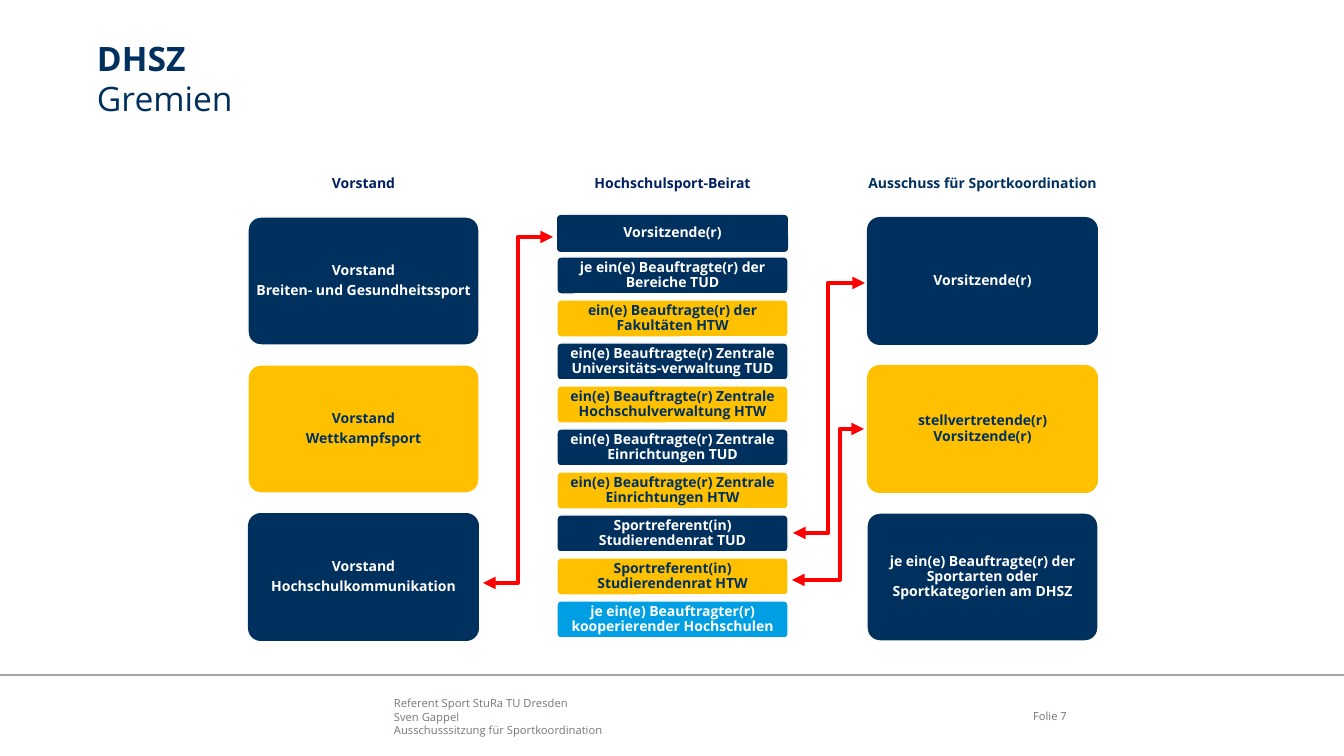
from lxml import etree
from pptx import Presentation
from pptx.dml.color import RGBColor
from pptx.enum.shapes import MSO_CONNECTOR, MSO_SHAPE
from pptx.enum.text import MSO_ANCHOR, PP_ALIGN
from pptx.oxml.ns import qn
from pptx.util import Pt

SLIDE_WIDTH, SLIDE_HEIGHT = 1344, 756
EMU_PER_PX = 12192000 / SLIDE_WIDTH
FONT = "Open Sans"
COLORS = {
    "title": "00305E", "navy": "00305D", "heading": "002060", "yellow": "FFC000",
    "cyan": "009FE3", "white": "FFFFFF", "red": "FF0000",
    "gray": "727879", "rule": "A6A6A6",
}
TEXT_ON = {"navy": "white", "yellow": "navy", "cyan": "white"}
LEFT, CENTER, RIGHT = PP_ALIGN.LEFT, PP_ALIGN.CENTER, PP_ALIGN.RIGHT
TOP, MIDDLE, BOTTOM = MSO_ANCHOR.TOP, MSO_ANCHOR.MIDDLE, MSO_ANCHOR.BOTTOM
ROUNDED = MSO_SHAPE.ROUNDED_RECTANGLE
STRAIGHT, ELBOW = MSO_CONNECTOR.STRAIGHT, MSO_CONNECTOR.ELBOW

COLUMN_WIDTH = 231
CARD_TOP, CARD_HEIGHT, CARD_PITCH = 217, 128, 148
ROW_TOP, ROW_HEIGHT, ROWS_SPAN = 215, 37, 386
BOARD_LEFT, COUNCIL_LEFT, COMMITTEE_LEFT = 248, 557, 867

HEADINGS = [
    (BOARD_LEFT, "Vorstand", "heading"),
    (COUNCIL_LEFT, "Hochschulsport-Beirat", "heading"),
    (COMMITTEE_LEFT, "Ausschuss für Sportkoordination", "navy"),
]
# Each card or row: lines, fill, white outline
BOARD = [
    (["Vorstand", "Breiten- und Gesundheitssport"], "navy", True),
    (["Vorstand", "Wettkampfsport"], "yellow", True),
    (["Vorstand", "Hochschulkommunikation"], "navy", False),
]
COMMITTEE = [
    (["Vorsitzende(r)"], "navy", False),
    (["stellvertretende(r) Vorsitzende(r)"], "yellow", False),
    (["je ein(e) Beauftragte(r) der Sportarten oder Sportkategorien am DHSZ"],
     "navy", True),
]
COUNCIL = [
    ("Vorsitzende(r)", "navy", False),
    ("je ein(e) Beauftragte(r) der Bereiche TUD", "navy", True),
    ("ein(e) Beauftragte(r) der Fakultäten HTW", "yellow", True),
    ("ein(e) Beauftragte(r) Zentrale Universitäts-verwaltung TUD", "navy", True),
    ("ein(e) Beauftragte(r) Zentrale Hochschulverwaltung HTW", "yellow", True),
    ("ein(e) Beauftragte(r) Zentrale Einrichtungen TUD", "navy", True),
    ("ein(e) Beauftragte(r) Zentrale Einrichtungen HTW", "yellow", True),
    ("Sportreferent(in) Studierendenrat TUD", "navy", True),
    ("Sportreferent(in) Studierendenrat HTW", "yellow", True),
    ("je ein(e) Beauftragter(r) kooperierender Hochschulen", "cyan", True),
]
# Each link: start, end, x of the vertical part
LINKS = [
    ((483, 583), (553, 237), 518),
    ((793, 533), (865, 283), 828),
    ((792, 580), (864, 429), 840),
]
FOOTER = ["Referent Sport StuRa TU Dresden", "Sven Gappel",
          "Ausschusssitzung für Sportkoordination"]


def emu(px):
    return round(px * EMU_PER_PX)


def rgb(name):
    return RGBColor.from_string(COLORS[name])


class SlideBuilder:
    def __init__(self, page):
        self.page = page

    def prepare(self, frame, anchor, inset=0):
        frame.word_wrap = True
        frame.vertical_anchor = anchor
        frame.margin_left = frame.margin_right = emu(inset)
        frame.margin_top = frame.margin_bottom = 0

    def add_text(self, frame, text, size, color, align=LEFT, bold=False):
        """Add a paragraph, filling the first one if it is still empty."""
        para = frame.paragraphs[0]
        if para.runs:
            para = frame.add_paragraph()
        para.alignment = align
        span = para.add_run()
        span.text = text
        span.font.name = FONT
        span.font.size = Pt(size)
        span.font.bold = bold
        span.font.color.rgb = rgb(color)
        return para

    def label(self, frame, text, color):
        """Add a bold centred paragraph in the chart's tight spacing."""
        para = self.add_text(frame, text, 10, color, CENTER, True)
        para.line_spacing = 0.9
        para.space_after = Pt(3.5)

    def text_frame(self, left, top, width, height, anchor):
        box = self.page.shapes.add_textbox(*map(emu, (left, top, width, height)))
        self.prepare(box.text_frame, anchor)
        return box.text_frame

    def card(self, left, top, height, lines, fill, outlined):
        box = self.page.shapes.add_shape(
            ROUNDED, *map(emu, (left, top, COLUMN_WIDTH, height)))
        box.shadow.inherit = False
        box.adjustments[0] = 0.1
        box.fill.solid()
        box.fill.fore_color.rgb = rgb(fill)
        if outlined:
            box.line.color.rgb = rgb("white")
            box.line.width = Pt(1)
        else:
            box.line.fill.background()
        self.prepare(box.text_frame, MIDDLE, 4)
        for line in lines:
            self.label(box.text_frame, line, TEXT_ON[fill])

    def connector(self, kind, start, end, color, width):
        line = self.page.shapes.add_connector(kind, *map(emu, start + end))
        line.line.color.rgb = rgb(color)
        line.line.width = Pt(width)
        etree.SubElement(line._element.spPr, qn("a:effectLst"))
        return line

    def link(self, start, end, bend):
        """Draw a double-headed elbow whose vertical part stands at x = bend."""
        properties = self.connector(ELBOW, start, end, "red", 3)._element.spPr
        share = round((bend - start[0]) / (end[0] - start[0]) * 100000)
        guides = properties.find(qn("a:prstGeom")).find(qn("a:avLst"))
        etree.SubElement(guides, qn("a:gd"), name="adj1", fmla=f"val {share}")
        for tip in ("a:headEnd", "a:tailEnd"):
            etree.SubElement(properties.find(qn("a:ln")), qn(tip), type="triangle")


def main():
    deck = Presentation()
    deck.slide_width, deck.slide_height = emu(SLIDE_WIDTH), emu(SLIDE_HEIGHT)
    builder = SlideBuilder(deck.slides.add_slide(deck.slide_layouts[6]))

    footer = builder.text_frame(394, 697, 571, 40, BOTTOM)
    for line in FOOTER:
        builder.add_text(footer, line, 8, "gray")
    builder.connector(STRAIGHT, (0, 675), (SLIDE_WIDTH, 675), "rule", 1)
    number = builder.text_frame(989, 709, 78, 14, MIDDLE)
    builder.add_text(number, "Folie 7", 8, "gray", RIGHT)

    title = builder.text_frame(97, 38, 1166, 82, TOP)
    builder.add_text(title, "DHSZ", 24, "title", bold=True)
    builder.add_text(title, "Gremien", 24, "title")

    for left, text, color in HEADINGS:
        heading = builder.text_frame(left - 23, 169, COLUMN_WIDTH + 46, 30, MIDDLE)
        builder.label(heading, text, color)

    for left, cards in ((BOARD_LEFT, BOARD), (COMMITTEE_LEFT, COMMITTEE)):
        for index, card in enumerate(cards):
            builder.card(left, CARD_TOP + index * CARD_PITCH, CARD_HEIGHT, *card)
    for index, (text, fill, outlined) in enumerate(COUNCIL):
        top = ROW_TOP + index * ROWS_SPAN // (len(COUNCIL) - 1)
        builder.card(COUNCIL_LEFT, top, ROW_HEIGHT, [text], fill, outlined)

    for link in LINKS:
        builder.link(*link)
    deck.save("out.pptx")


if __name__ == "__main__":
    main()
